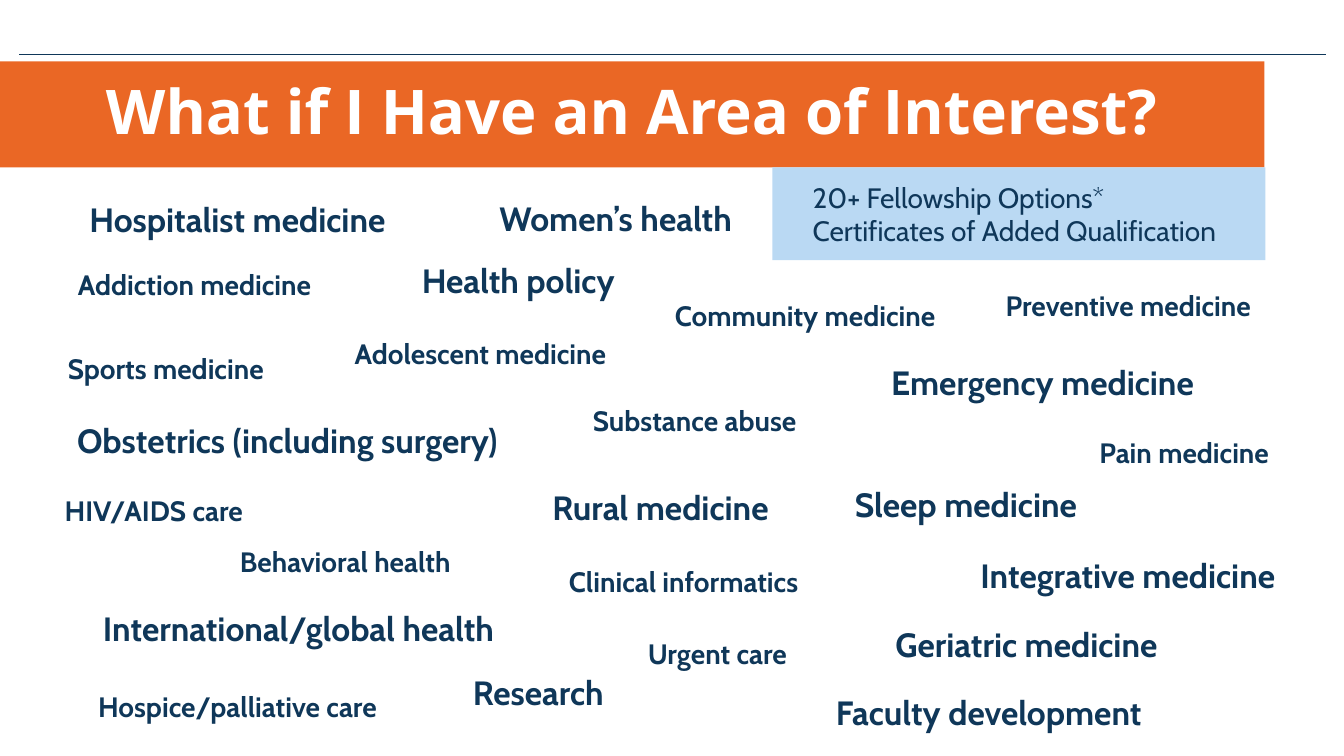
import pptx
import pptx.util
import pptx.dml.color
import pptx.enum.shapes
import pptx.enum.text
import pptx.oxml.ns
from lxml import etree

Inches = pptx.util.Inches
RGBColor = pptx.dml.color.RGBColor
PP_ALIGN = pptx.enum.text.PP_ALIGN
MIDDLE = pptx.enum.text.MSO_ANCHOR.MIDDLE

NAVY = RGBColor(0x0F, 0x37, 0x59)
ORANGE = RGBColor(0xEA, 0x67, 0x25)
SKY = RGBColor(0xBA, 0xD9, 0xF3)
WHITE = RGBColor(0xFF, 0xFF, 0xFF)

SMALL, LARGE = 20, 24
HEIGHTS = {SMALL: 0.44, LARGE: 0.5}

# name, size, left, top, width
INTERESTS = [
    ("Hospitalist medicine", LARGE, 0.62, 1.92, 3.47),
    ("Women’s health", LARGE, 4.55, 1.91, 3.11),
    ("Addiction medicine", SMALL, 0.43, 2.6, 3),
    ("Health policy", LARGE, 3.91, 2.53, 2.46),
    ("Community medicine", SMALL, 6.39, 2.91, 3.19),
    ("Preventive medicine", SMALL, 9.69, 2.81, 3),
    ("Sports medicine", SMALL, 0.23, 3.44, 2.83),
    ("Adolescent medicine", SMALL, 3.03, 3.29, 3.47),
    ("Emergency medicine", LARGE, 8.47, 3.54, 3.74),
    ("Obstetrics (including surgery)", LARGE, 0.33, 4.12, 5.04),
    ("Substance abuse", SMALL, 5.58, 3.95, 2.62),
    ("Pain medicine", SMALL, 10.55, 4.27, 2.39),
    ("HIV/AIDS care", SMALL, 0.23, 4.85, 2.59),
    ("Rural medicine", LARGE, 5.24, 4.78, 2.62),
    ("Sleep medicine", LARGE, 8.13, 4.75, 2.9),
    ("Behavioral health", SMALL, 2.01, 5.35, 2.83),
    ("Clinical informatics", SMALL, 4.94, 5.55, 3.68),
    ("Integrative medicine", LARGE, 9.37, 5.46, 3.63),
    ("International/global health", LARGE, 0.49, 5.98, 4.94),
    ("Urgent care", SMALL, 6.04, 6.27, 2.15),
    ("Geriatric medicine", LARGE, 8.47, 6.14, 3.42),
    ("Hospice/palliative care", SMALL, 0.63, 6.79, 3.45),
    ("Research", LARGE, 4.46, 6.62, 1.76),
    ("Faculty development", LARGE, 7.78, 6.82, 4.05),
]


def write(tf, *lines, size=SMALL, font="Cabin", color=NAVY, bold=False,
          align=PP_ALIGN.CENTER, spacing=None):
    """Fill a text frame with one paragraph per line."""
    tf.word_wrap = True
    for i, line in enumerate(lines):
        p = tf.add_paragraph() if i else tf.paragraphs[0]
        p.alignment = align
        p.line_spacing = spacing
        r = p.add_run()
        r.text = line
        r.font.name = font
        r.font.size = pptx.util.Pt(size)
        r.font.bold = bold
        r.font.color.rgb = color


class SlideBuilder:
    def __init__(self, prs):
        self.s = prs.slides.add_slide(prs.slide_layouts[5])  # Title Only

    def rule(self, left, right, y):
        line = self.s.shapes.add_connector(
            pptx.enum.shapes.MSO_CONNECTOR.STRAIGHT,
            Inches(left), Inches(y), Inches(right), Inches(y))
        line.line.color.rgb = NAVY
        line.line.width = pptx.util.Pt(0.5)
        etree.SubElement(line._element.spPr, pptx.oxml.ns.qn("a:effectLst"))

    def title(self, text, left, top, width, height):
        sp = self.s.shapes.title
        sp.left, sp.top = Inches(left), Inches(top)
        sp.width, sp.height = Inches(width), Inches(height)
        sp.fill.solid()
        sp.fill.fore_color.rgb = ORANGE
        tf = sp.text_frame
        tf.vertical_anchor = MIDDLE
        tf.auto_size = pptx.enum.text.MSO_AUTO_SIZE.NONE
        write(tf, text, size=44, font="Open Sans", color=WHITE, bold=True,
              spacing=0.9)

    def callout(self, lines, left, top, width, height):
        sp = self.s.shapes.add_shape(
            pptx.enum.shapes.MSO_SHAPE.RECTANGLE,
            Inches(left), Inches(top), Inches(width), Inches(height))
        sp.shadow.inherit = False
        sp.fill.solid()
        sp.fill.fore_color.rgb = SKY
        sp.line.fill.background()
        tf = sp.text_frame
        tf.vertical_anchor = MIDDLE
        tf.margin_left = Inches(0.4)
        write(tf, *lines, align=PP_ALIGN.LEFT)

    def interest(self, name, size, left, top, width):
        sp = self.s.shapes.add_textbox(
            Inches(left), Inches(top), Inches(width), Inches(HEIGHTS[size]))
        tf = sp.text_frame
        tf.auto_size = pptx.enum.text.MSO_AUTO_SIZE.SHAPE_TO_FIT_TEXT
        write(tf, name, size=size, bold=True)


def main():
    prs = pptx.Presentation()
    prs.slide_width, prs.slide_height = Inches(13.33), Inches(7.5)
    slide = SlideBuilder(prs)
    slide.rule(0.19, 13.15, 0.54)
    slide.title("What if I Have an Area of Interest?", 0, 0.61, 12.54, 1.05)
    for interest in INTERESTS:
        slide.interest(*interest)
    slide.callout(["20+ Fellowship Options*",
                   "Certificates of Added Qualification"],
                  7.66, 1.66, 4.89, 0.92)
    prs.save("out.pptx")


if __name__ == "__main__":
    main()
